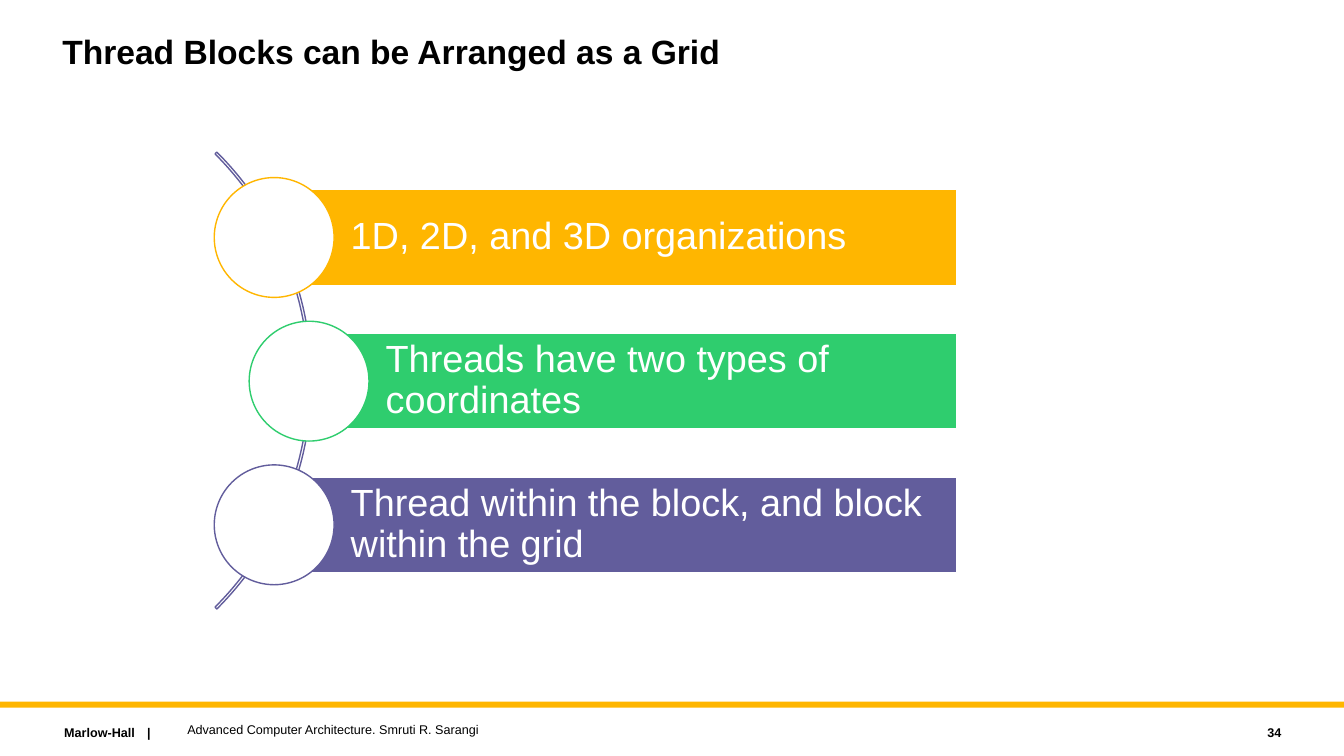
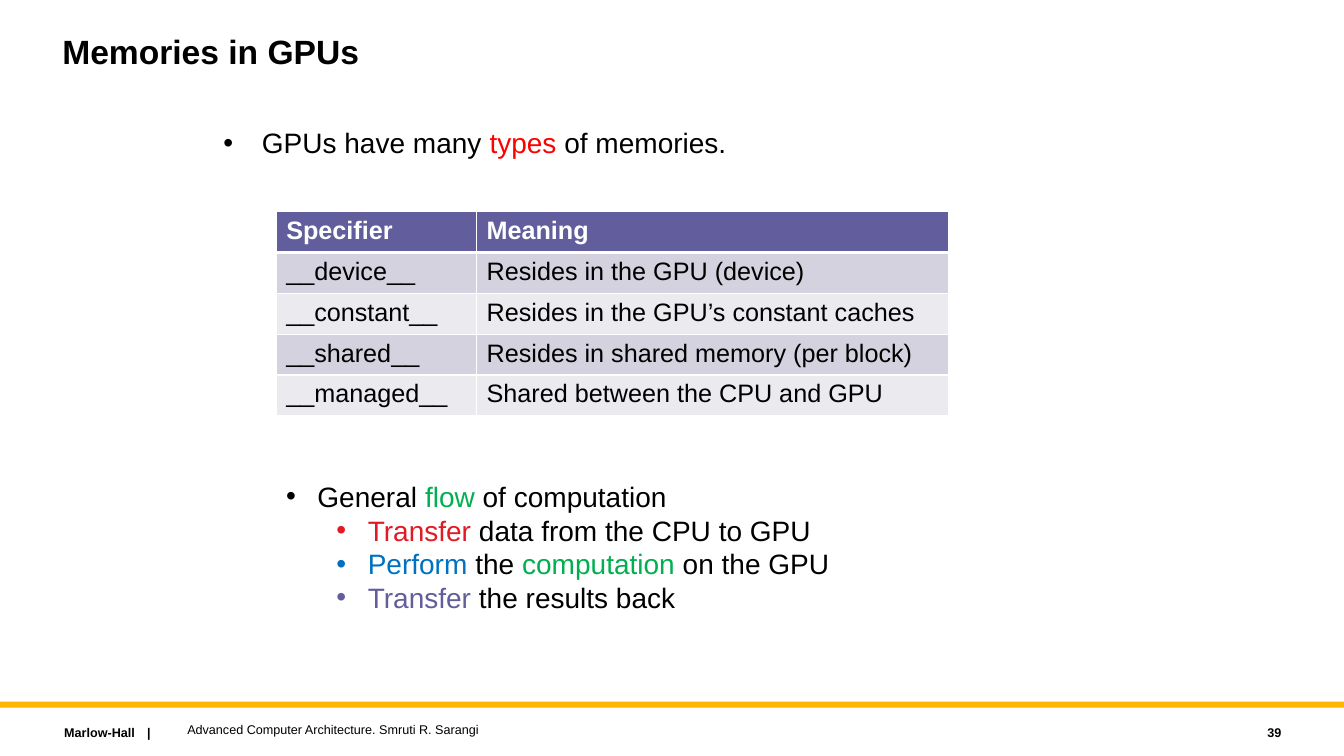
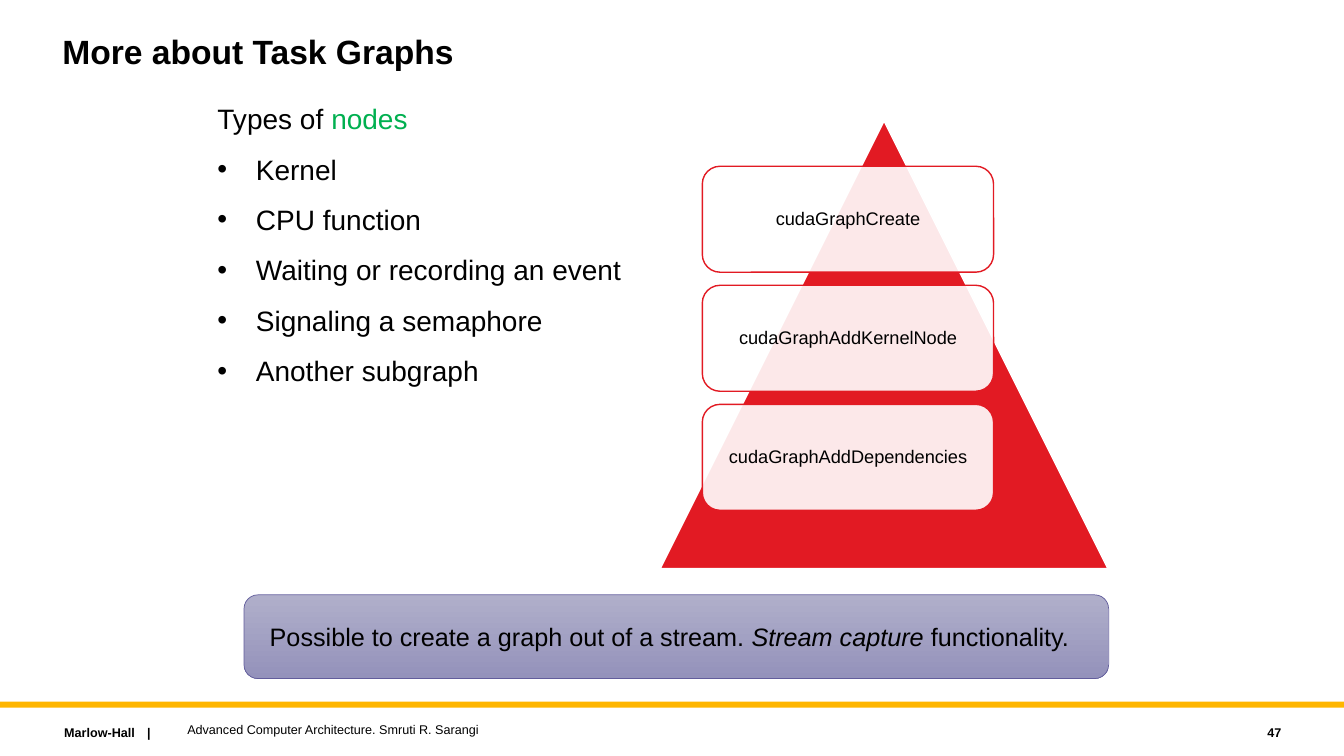
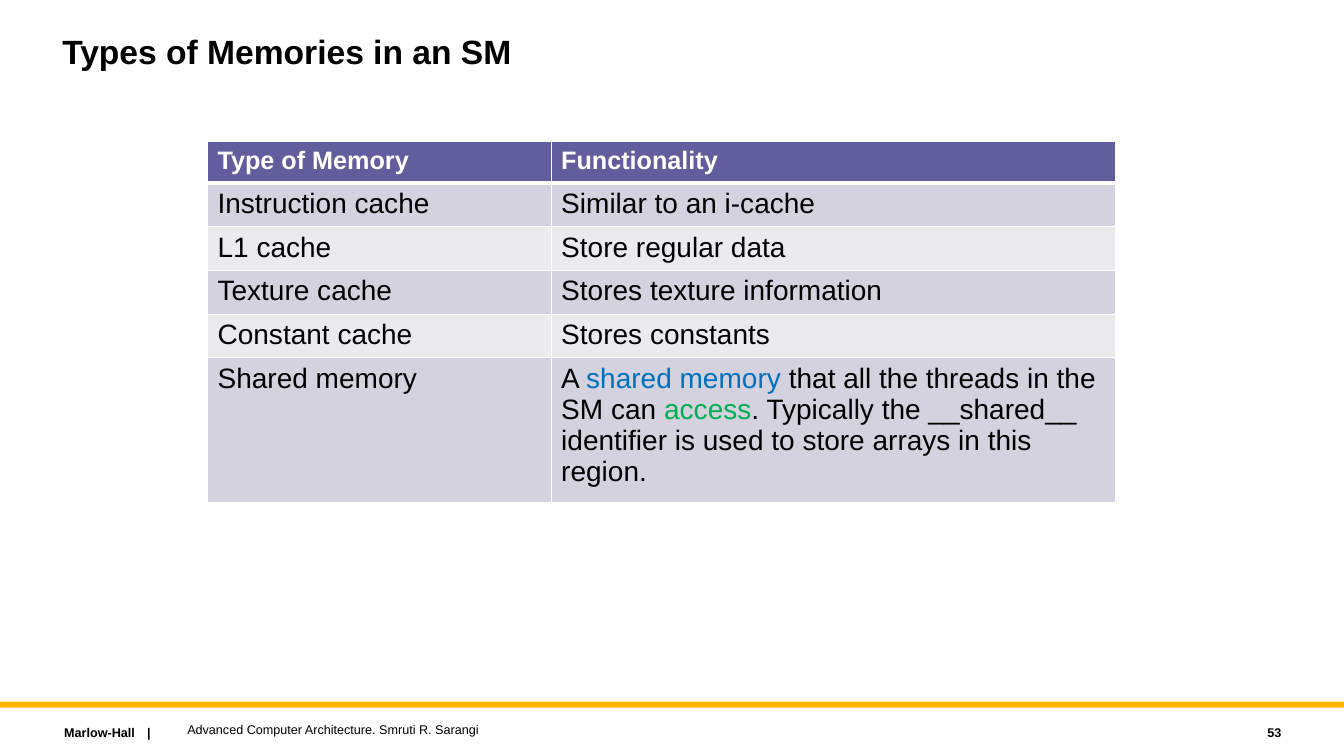
"""Build four lecture slides on GPU threads, memories and graphs."""
import dataclasses
from typing import Any, Optional, Sequence

import pptx
import pptx.dml.color
import pptx.enum.shapes
import pptx.enum.text
import pptx.oxml.ns
import pptx.oxml.xmlchemy
import pptx.util
from pptx.util import Cm

SHAPES = pptx.enum.shapes.MSO_SHAPE
ANCHOR = pptx.enum.text.MSO_ANCHOR
ALIGN = pptx.enum.text.PP_ALIGN


@dataclasses.dataclass(frozen=True)
class Theme:
    font: str = "Arial"
    black: str = "000000"
    white: str = "FFFFFF"
    amber: str = "FFB600"
    mint: str = "2FCD6E"
    purple: str = "625D9C"
    crimson: str = "E21A23"
    red: str = "FF0000"
    green: str = "00B050"
    blue: str = "0070C0"
    dark_row: str = "D3D2DE"
    light_row: str = "EAEAEF"
    banner_top: str = "B0AFCA"
    banner_bottom: str = "9492BB"
    title_size: float = 24
    bar_size: float = 27
    body_size: float = 20
    table_size: float = 18
    card_size: float = 13
    footer_size: float = 9


THEME = Theme()


@dataclasses.dataclass(frozen=True)
class Box:
    left: float
    top: float
    width: float
    height: float

    def lengths(self) -> tuple:
        return Cm(self.left), Cm(self.top), Cm(self.width), Cm(self.height)


@dataclasses.dataclass(frozen=True)
class Span:
    text: str
    color: Optional[str] = None
    italic: bool = False


@dataclasses.dataclass(frozen=True)
class Line:
    spans: Sequence[Span]
    indent: float = 0
    hanging: float = 0
    space_before: float = 0


@dataclasses.dataclass(frozen=True)
class Style:
    size: float
    color: str = THEME.black
    bold: bool = False
    align: Any = ALIGN.LEFT
    spacing: Optional[float] = None


@dataclasses.dataclass(frozen=True)
class Bar:
    text: str
    color: str
    left: float


@dataclasses.dataclass(frozen=True)
class TableLayout:
    left: float
    top: float
    columns: Sequence[float]
    rows: Sequence[float]
    body_size: float


def rgb(color: str) -> pptx.dml.color.RGBColor:
    return pptx.dml.color.RGBColor.from_string(color)


def add_child(parent: Any, tag: str, **attributes: Any) -> Any:
    child = pptx.oxml.xmlchemy.OxmlElement(tag)
    for name, value in attributes.items():
        child.set(name, str(value))
    parent.append(child)
    return child


def plain(text: str) -> list[Line]:
    return [Line([Span(text)])]


def write(frame: Any, lines: Sequence[Line], style: Style) -> None:
    frame.word_wrap = True
    for index, line in enumerate(lines):
        para = frame.add_paragraph() if index else frame.paragraphs[0]
        para.alignment = style.align
        if style.spacing:
            para.line_spacing = style.spacing
        if line.space_before and index:
            para.space_before = pptx.util.Pt(line.space_before)
        if line.hanging:
            properties = para._p.get_or_add_pPr()
            properties.set("marL", str(Cm(line.indent)))
            properties.set("indent", str(-Cm(line.hanging)))
            add_child(properties, "a:buFont", typeface=THEME.font)
            add_child(properties, "a:buChar", char="•")
        for span in line.spans:
            run = para.add_run()
            run.text = span.text
            run.font.name = THEME.font
            run.font.size = pptx.util.Pt(style.size)
            run.font.bold = style.bold
            run.font.italic = span.italic
            run.font.color.rgb = rgb(span.color or style.color)


def add_text(page: Any, box: Box, lines: Sequence[Line], style: Style,
             anchor: Any = ANCHOR.TOP) -> Any:
    shape = page.shapes.add_textbox(*box.lengths())
    shape.text_frame.vertical_anchor = anchor
    write(shape.text_frame, lines, style)
    return shape


def add_shape(page: Any, kind: Any, box: Box, fill: Optional[str],
              line: Optional[str], width: float = 1) -> Any:
    shape = page.shapes.add_shape(kind, *box.lengths())
    shape.shadow.inherit = False
    if fill:
        shape.fill.solid()
        shape.fill.fore_color.rgb = rgb(fill)
    else:
        shape.fill.background()
    if line:
        shape.line.color.rgb = rgb(line)
        shape.line.width = pptx.util.Pt(width)
    else:
        shape.line.fill.background()
    shape.text_frame.vertical_anchor = ANCHOR.MIDDLE
    return shape


def set_margins(frame: Any, left: float, top: float, right: float,
                bottom: float) -> None:
    frame.margin_left, frame.margin_top = Cm(left), Cm(top)
    frame.margin_right, frame.margin_bottom = Cm(right), Cm(bottom)


def add_page(deck: Any, title: str, number: int) -> Any:
    page = deck.slides.add_slide(deck.slide_layouts[6])
    add_shape(page, SHAPES.RECTANGLE, Box(0, 17.68, 33.87, 0.15),
              THEME.amber, None)
    publisher = add_text(page, Box(1.37, 18.14, 5.77, 0.64),
                         plain("Marlow-Hall\t|"),
                         Style(THEME.footer_size, bold=True))
    properties = publisher.text_frame.paragraphs[0]._p.get_or_add_pPr()
    tabs = add_child(properties, "a:tabLst")
    add_child(tabs, "a:tab", pos=Cm(2.09), algn="l")
    add_text(page, Box(1.32, 0.76, 25.4, 2.29), plain(title),
             Style(THEME.title_size, bold=True, spacing=0.9))
    add_text(page, Box(4.47, 18.07, 20.32, 0.64),
             plain("Advanced Computer Architecture. Smruti R. Sarangi"),
             Style(THEME.footer_size), ANCHOR.MIDDLE)
    add_text(page, Box(28.98, 18.14, 3.56, 0.64), plain(str(number)),
             Style(THEME.footer_size, bold=True, align=ALIGN.RIGHT),
             ANCHOR.MIDDLE)
    return page


def set_borders(cell: Any, bottom: float) -> None:
    properties = cell._tc.get_or_add_tcPr()
    widths = {"a:lnL": 1, "a:lnR": 1, "a:lnT": 1, "a:lnB": bottom}
    for tag, width in widths.items():
        border = add_child(properties, tag, w=pptx.util.Pt(width))
        fill = add_child(border, "a:solidFill")
        add_child(fill, "a:srgbClr", val=THEME.white)


def add_table(page: Any, layout: TableLayout,
              rows: Sequence[Sequence[Sequence[Span]]]) -> None:
    box = Box(layout.left, layout.top, sum(layout.columns), sum(layout.rows))
    table = page.shapes.add_table(len(rows), len(layout.columns),
                                  *box.lengths()).table
    for column, width in zip(table.columns, layout.columns):
        column.width = Cm(width)
    for index, (row, height) in enumerate(zip(table.rows, layout.rows)):
        row.height = Cm(height)
        if index == 0:
            fill = THEME.purple
            style = Style(THEME.table_size, THEME.white, bold=True)
        else:
            fill = THEME.dark_row if index % 2 else THEME.light_row
            style = Style(layout.body_size)
        for cell, spans in zip(row.cells, rows[index]):
            set_borders(cell, 1 if index else 3)
            cell.fill.solid()
            cell.fill.fore_color.rgb = rgb(fill)
            write(cell.text_frame, [Line(spans)], style)


def cells(*texts: str) -> list[list[Span]]:
    return [[Span(text)] for text in texts]


def build_grid_page(deck: Any) -> None:
    page = add_page(deck, "Thread Blocks can be Arranged as a Grid", 34)
    arc = add_shape(page, SHAPES.BLOCK_ARC, Box(-8.43, 1.45, 16.28, 16.28),
                    None, THEME.purple)
    for index, value in enumerate((189, 27, 0.004)):
        arc.adjustments[index] = value
    top, pitch, height, right, diameter = 4.78, 3.62, 2.41, 24.1, 3.02
    bars = [
        Bar("1D, 2D, and 3D organizations", THEME.amber, 6.91),
        Bar("Threads have two types of coordinates", THEME.mint, 7.79),
        Bar("Thread within the block, and block within the grid",
            THEME.purple, 6.91),
    ]
    for index, bar in enumerate(bars):
        bar_top = top + index * pitch
        shape = add_shape(page, SHAPES.RECTANGLE,
                          Box(bar.left, bar_top, right - bar.left, height),
                          bar.color, THEME.white)
        set_margins(shape.text_frame, 1.93, 0.18, 0.18, 0.18)
        write(shape.text_frame, plain(bar.text),
              Style(THEME.bar_size, THEME.white, spacing=0.9))
        circle = Box(bar.left - diameter / 2,
                     bar_top + (height - diameter) / 2, diameter, diameter)
        add_shape(page, SHAPES.OVAL, circle, THEME.white, bar.color)


def build_memories_page(deck: Any) -> None:
    page = add_page(deck, "Memories in GPUs", 39)
    body = Style(THEME.body_size)
    intro = [Span("GPUs have many "), Span("types", THEME.red),
             Span(" of memories.")]
    add_text(page, Box(5.38, 3.05, 19.05, 1.32), [Line(intro, 0.97, 0.97)],
             body)
    add_table(page, TableLayout(6.96, 5.33, (5.05, 11.89), (1.03,) * 5,
                                THEME.table_size), [
        cells("Specifier", "Meaning"),
        cells("__device__", "Resides in the GPU (device)"),
        cells("__constant__", "Resides in the GPU’s constant caches"),
        cells("__shared__", "Resides in shared memory (per block)"),
        cells("__managed__", "Shared between the CPU and GPU"),
    ])
    flow = [Span("General "), Span("flow", THEME.green),
            Span(" of computation")]
    steps = [
        [Span("Transfer", THEME.crimson), Span(" data from the CPU to GPU")],
        [Span("Perform", THEME.blue), Span(" the "),
         Span("computation", THEME.green), Span(" on the GPU")],
        [Span("Transfer", THEME.purple), Span(" the results back")],
    ]
    lines = [Line(flow, 0.79, 0.79)]
    lines += [Line(step, 2.06, 0.79) for step in steps]
    add_text(page, Box(6.96, 11.96, 14.3, 3.68), lines, body)


def build_graphs_page(deck: Any) -> None:
    page = add_page(deck, "More about Task Graphs", 47)
    nodes = ("Kernel", "CPU function", "Waiting or recording an event",
             "Signaling a semaphore", "Another subgraph")
    lines = [Line([Span("Types of "), Span("nodes", THEME.green)])]
    lines += [Line([Span(node)], 0.97, 0.97, 12) for node in nodes]
    add_text(page, Box(5.23, 2.44, 19.05, 7.57), lines,
             Style(THEME.body_size))
    add_shape(page, SHAPES.ISOSCELES_TRIANGLE,
              Box(16.64, 3.05, 11.28, 11.28), THEME.crimson, THEME.white)
    calls = ("cudaGraphCreate", "cudaGraphAddKernelNode",
             "cudaGraphAddDependencies")
    for index, call in enumerate(calls):
        card = add_shape(page, SHAPES.ROUNDED_RECTANGLE,
                         Box(17.7, 4.19 + index * 3, 7.34, 2.67),
                         THEME.white, THEME.crimson)
        color = card._element.spPr.find(
            pptx.oxml.ns.qn("a:solidFill")).find(
            pptx.oxml.ns.qn("a:srgbClr"))
        add_child(color, "a:alpha", val=90000)
        set_margins(card.text_frame, 0.25, 0.25, 0.25, 0.25)
        write(card.text_frame, plain(call),
              Style(THEME.card_size, align=ALIGN.CENTER, spacing=0.9))
    banner = add_shape(page, SHAPES.ROUNDED_RECTANGLE,
                       Box(6.15, 14.99, 21.79, 2.11), None, THEME.purple, 0.5)
    banner.fill.gradient()
    banner.fill.gradient_angle = 270
    colors = (THEME.banner_top, THEME.banner_bottom)
    for position, (stop, color) in enumerate(
            zip(banner.fill.gradient_stops, colors)):
        stop.color.rgb = rgb(color)
        stop.position = position
    set_margins(banner.text_frame, 0.25, 0.13, 0.6, 0.13)
    message = [Span("Possible to create a graph out of a stream. "),
               Span("Stream capture ", italic=True), Span("functionality.")]
    write(banner.text_frame, [Line(message)],
          Style(THEME.table_size, align=ALIGN.CENTER))


def build_sm_page(deck: Any) -> None:
    page = add_page(deck, "Types of Memories in an SM", 53)
    shared = [
        Span("A "), Span("shared memory ", THEME.blue),
        Span("that all the threads in the SM can "),
        Span("access", THEME.green),
        Span(". Typically the __shared__ identifier is used to store arrays "
             "in this region."),
    ]
    add_table(page, TableLayout(5.23, 3.56, (8.66, 14.22),
                                (1.05,) + (1.03,) * 4 + (3.25,),
                                THEME.body_size), [
        cells("Type of Memory", "Functionality"),
        cells("Instruction cache", "Similar to an i-cache"),
        cells("L1 cache", "Store regular data"),
        cells("Texture cache", "Stores texture information"),
        cells("Constant cache", "Stores constants"),
        [[Span("Shared memory")], shared],
    ])


def main() -> None:
    deck = pptx.Presentation()
    deck.slide_width, deck.slide_height = Cm(33.87), Cm(19.05)
    build_grid_page(deck)
    build_memories_page(deck)
    build_graphs_page(deck)
    build_sm_page(deck)
    deck.save("out.pptx")


if __name__ == "__main__":
    main()
